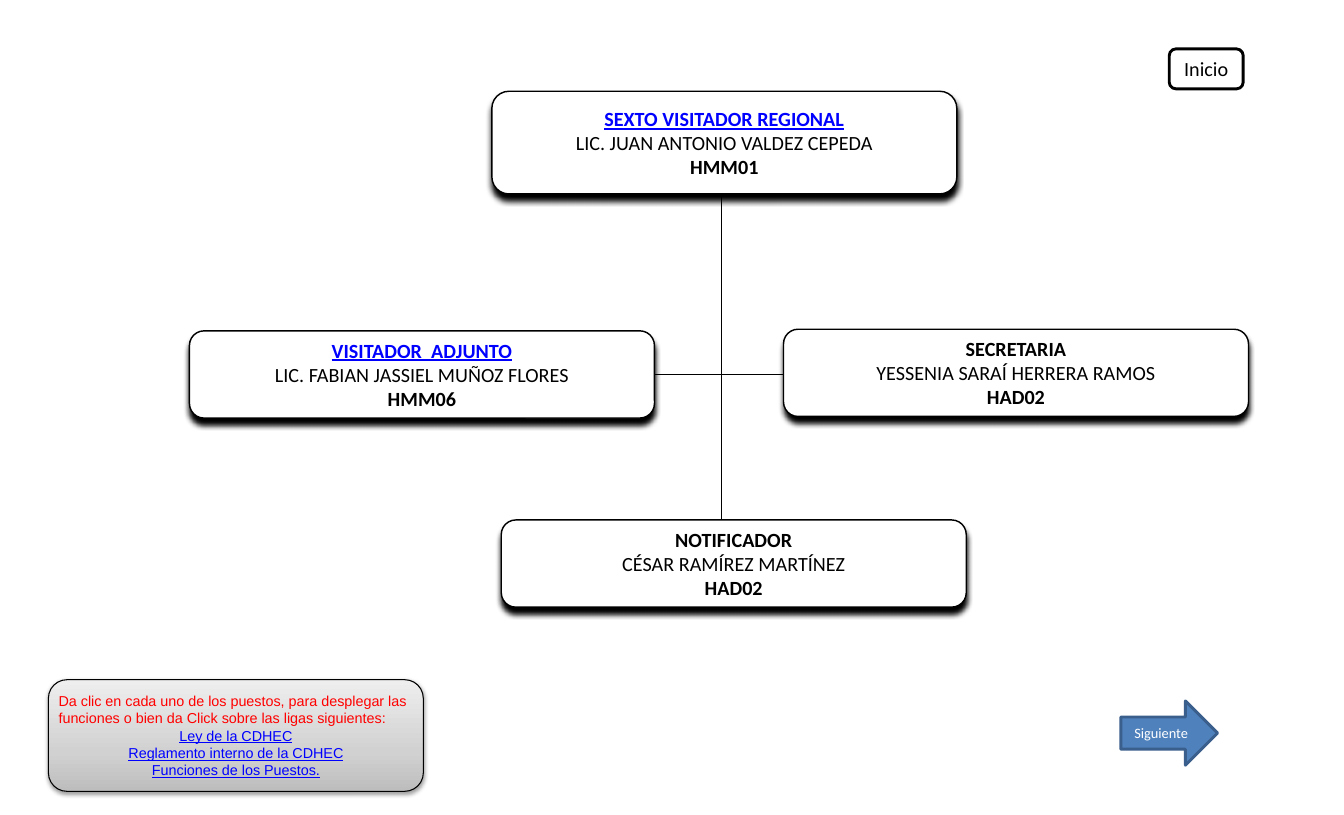
"""Build the organisation chart slide of a regional visitor's office."""
from copy import deepcopy
from dataclasses import dataclass

from lxml import etree
from pptx import Presentation
from pptx import util as u
from pptx.dml.color import RGBColor
from pptx.enum import shapes, text
from pptx.oxml.ns import qn

WIDTH, HEIGHT = u.Inches(12.99), u.Inches(7.88)
BLACK, WHITE, BLUE, RED = "000000", "FFFFFF", "0000FF", "FF0000"
CENTER, LEFT = text.PP_ALIGN.CENTER, text.PP_ALIGN.LEFT
ROUNDED = shapes.MSO_SHAPE.ROUNDED_RECTANGLE


@dataclass(frozen=True)
class Area:
    """A rectangle in percent of the slide's width and height."""
    left: float
    top: float
    width: float
    height: float

    def lengths(self) -> tuple[int, int, int, int]:
        return (across(self.left), down(self.top), across(self.width), down(self.height))


@dataclass(frozen=True)
class Line:
    """A paragraph with its look."""
    words: str
    size: float = 14
    font: str = "Calibri"
    color: str = BLACK
    bold: bool = False
    underline: bool = False
    align: text.PP_ALIGN = CENTER


@dataclass(frozen=True)
class Shadow:
    """A shadow falling straight down, in points and percent."""
    opacity: int
    blur: float
    distance: float


@dataclass(frozen=True)
class Post:
    """A post of the chart, with its holder and grade."""
    area: Area
    title: str
    holder: str
    grade: str
    linked: bool = False


POSTS = [
    Post(Area(36.6, 11.2, 34.6, 12.6), "SEXTO VISITADOR REGIONAL",
         "LIC. JUAN ANTONIO VALDEZ CEPEDA", "HMM01", True),
    Post(Area(14.1, 40.6, 34.6, 10.7), "VISITADOR  ADJUNTO",
         "LIC. FABIAN JASSIEL MUÑOZ FLORES", "HMM06", True),
    Post(Area(37.3, 63.8, 34.6, 10.7), "NOTIFICADOR", "CÉSAR RAMÍREZ MARTÍNEZ", "HAD02"),
    Post(Area(58.3, 40.4, 34.6, 10.7), "SECRETARIA", "YESSENIA SARAÍ HERRERA RAMOS", "HAD02"),
]
CONNECTIONS = [(53.7, 24, 53.7, 63.8), (45.7, 45.9, 58.5, 45.9)]
NOTICE = ("Da clic en cada uno de los puestos, para desplegar las funciones "
          "o bien da Click sobre las ligas siguientes:")
LINKS = ["Ley de la CDHEC", "Reglamento interno de la CDHEC", "Funciones de los Puestos."]
PANEL_STOPS = [(0, "BDBDBD"), (0.35, "D1D1D1"), (1, "EEEEEE")]


def across(percent: float) -> int:
    return round(WIDTH * percent / 100)


def down(percent: float) -> int:
    return round(HEIGHT * percent / 100)


def rgb(color: str) -> RGBColor:
    return RGBColor.from_string(color)


def add_shadow(shape, shadow: Shadow) -> None:
    effects = shape.element.spPr.find(qn("a:effectLst"))
    outer = etree.SubElement(
        effects, qn("a:outerShdw"), blurRad=str(u.Pt(shadow.blur)),
        dist=str(u.Pt(shadow.distance)), dir="5400000", algn="ctr", rotWithShape="0")
    color = etree.SubElement(outer, qn("a:srgbClr"), val=BLACK)
    etree.SubElement(color, qn("a:alpha"), val=str(shadow.opacity * 1000))


def add_box(slide, kind, area: Area, fill: str, outline: str, weight: float,
            shadow: Shadow | None = None):
    shape = slide.shapes.add_shape(kind, *area.lengths())
    shape.shadow.inherit = False
    shape.fill.solid()
    shape.fill.fore_color.rgb = rgb(fill)
    shape.line.color.rgb = rgb(outline)
    shape.line.width = u.Pt(weight)
    if shadow:
        add_shadow(shape, shadow)
    return shape


def write(shape, lines: list[Line], wrap: bool = True,
          anchor: text.MSO_ANCHOR = text.MSO_ANCHOR.MIDDLE) -> None:
    frame = shape.text_frame
    frame.word_wrap = wrap
    frame.vertical_anchor = anchor
    frame.text = "\n".join(line.words for line in lines)
    for paragraph, line in zip(frame.paragraphs, lines):
        paragraph.alignment = line.align
        font = paragraph.font
        font.name, font.size = line.font, u.Pt(line.size)
        font.bold, font.underline = line.bold, line.underline
        font.color.rgb = rgb(line.color)


def add_connection(slide, ends: tuple[float, float, float, float]) -> None:
    x1, y1, x2, y2 = ends
    connector = slide.shapes.add_connector(
        shapes.MSO_CONNECTOR.STRAIGHT, across(x1), down(y1), across(x2), down(y2))
    connector.line.color.rgb = rgb(BLACK)
    connector.line.width = u.Pt(0.75)
    etree.SubElement(connector.element.spPr, qn("a:effectLst"))


def add_post(slide, post: Post) -> None:
    shape = add_box(slide, ROUNDED, post.area, WHITE, BLACK, 1, Shadow(100, 4, 4))
    frame = shape.text_frame
    frame.margin_left = frame.margin_right = u.Inches(0.17)
    frame.margin_top = frame.margin_bottom = u.Inches(0.09)
    write(shape, [
        Line(post.title, color=BLUE if post.linked else BLACK, bold=True, underline=post.linked),
        Line(post.holder),
        Line(post.grade, bold=True),
    ], wrap=False)


def add_notice(slide) -> None:
    panel = add_box(slide, ROUNDED, Area(3.6, 83.4, 27.9, 13.7), WHITE, BLACK, 0.75,
                    Shadow(38, 3.1, 1.6))
    panel.fill.gradient()
    panel.fill.gradient_angle = 90
    stops = panel.element.spPr.find(".//" + qn("a:gsLst"))
    stops.insert(1, deepcopy(stops[0]))
    for stop, (position, color) in zip(panel.fill.gradient_stops, PANEL_STOPS):
        stop.position = position
        stop.color.rgb = rgb(color)
    box = slide.shapes.add_textbox(*Area(3.6, 84.3, 27.9, 11.9).lengths())
    links = [Line(link, 10, "Arial", BLUE, underline=True) for link in LINKS]
    write(box, [Line(NOTICE, 10, "Arial", RED, align=LEFT), *links],
          anchor=text.MSO_ANCHOR.TOP)


def main() -> None:
    presentation = Presentation()
    presentation.slide_width, presentation.slide_height = WIDTH, HEIGHT
    slide = presentation.slides.add_slide(presentation.slide_layouts[6])
    for ends in CONNECTIONS:
        add_connection(slide, ends)
    for post in POSTS:
        add_post(slide, post)
    home = add_box(slide, ROUNDED, Area(87, 6, 5.5, 4.9), WHITE, BLACK, 2)
    write(home, [Line("Inicio")])
    add_notice(slide)
    forward = add_box(slide, shapes.MSO_SHAPE.RIGHT_ARROW, Area(83.4, 86, 7.2, 7.9),
                      "4F81BD", "3A5F8C", 2)
    write(forward, [Line("Siguiente", 10, color=WHITE)])
    presentation.save("out.pptx")


if __name__ == "__main__":
    main()
